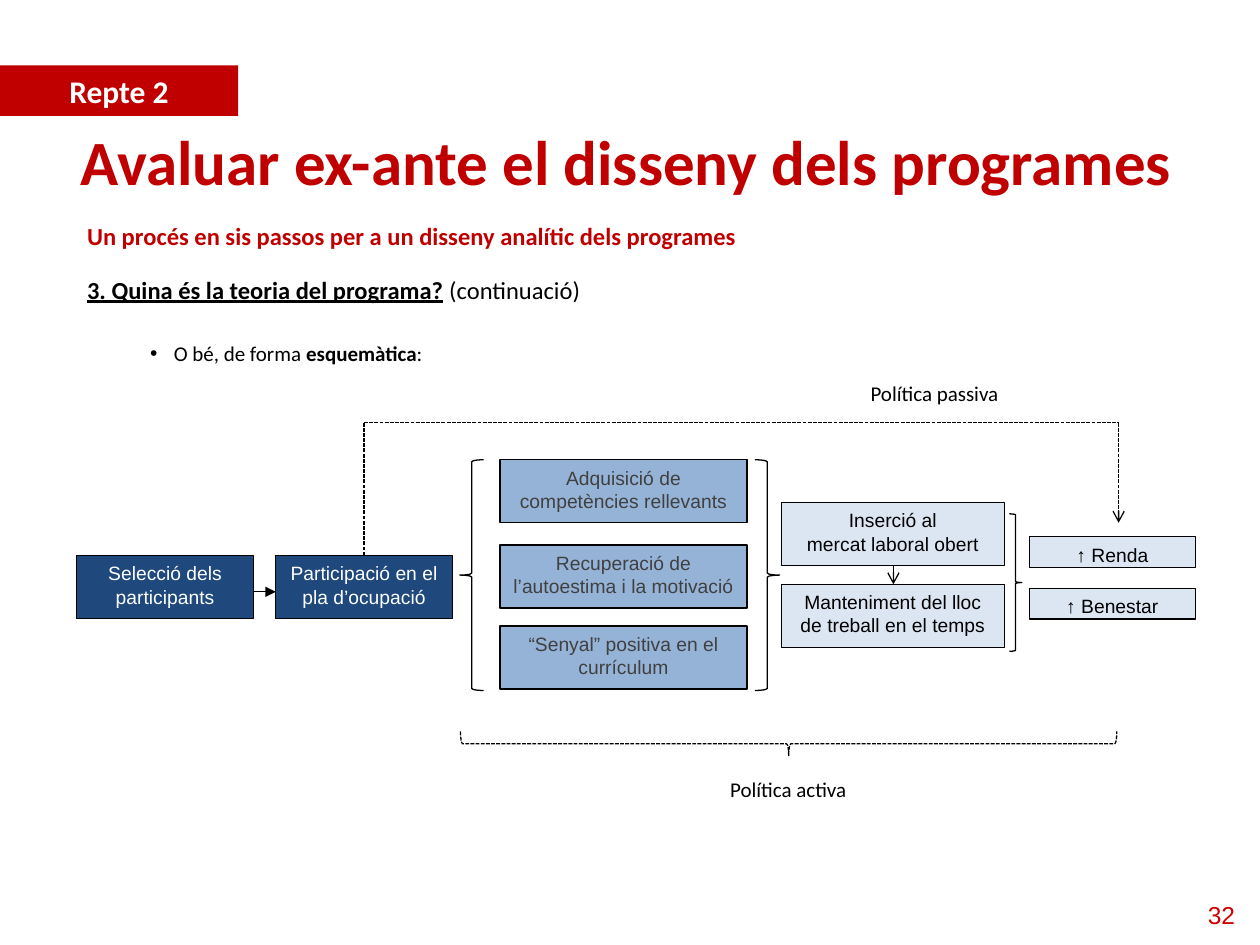
from lxml import etree
from pptx import Presentation
from pptx.dml.color import RGBColor
from pptx.enum import dml, shapes, text
from pptx.oxml import ns
from pptx.util import Cm, Pt

RED, BLACK, WHITE = "C00000", "000000", "FFFFFF"
NAVY, BLUE, PALE, GREY = "1F497D", "95B3D7", "DCE6F2", "404040"
CENTER, LEFT = text.PP_ALIGN.CENTER, text.PP_ALIGN.LEFT


def colour(hex_value):
    return RGBColor.from_string(hex_value)


def lengths(*values):
    return [Cm(value) for value in values]


def place(shape, box):
    for name, value in zip(("left", "top", "width", "height"), lengths(*box)):
        setattr(shape, name, value)


def set_font(font, fill, **values):
    for name, value in values.items():
        setattr(font, name, Pt(value) if name == "size" else value)
    font.color.rgb = colour(fill)


def set_frame(frame, anchor=text.MSO_ANCHOR.TOP):
    values = {"word_wrap": True, "auto_size": text.MSO_AUTO_SIZE.NONE,
              "vertical_anchor": anchor}
    for name, value in values.items():
        setattr(frame, name, value)


def write(shape, words, fill, align=CENTER, **font):
    frame = shape.text_frame
    set_frame(frame)
    frame.text = words
    for para in frame.paragraphs:
        para.alignment = align
        set_font(para.font, fill, **font)


def add_label(page, box, words, fill, align=CENTER, **font):
    write(page.shapes.add_textbox(*lengths(*box)), words, fill, align, **font)


def style_line(line, dashed=False):
    line.color.rgb = colour(BLACK)
    line.width = Pt(0.75)
    if dashed:
        line.dash_style = dml.MSO_LINE.SQUARE_DOT


def add_box(page, box, words, fill, ink):
    shape = page.shapes.add_shape(shapes.MSO_SHAPE.RECTANGLE, *lengths(*box))
    shape.shadow.inherit = False
    shape.fill.solid()
    shape.fill.fore_color.rgb = colour(fill)
    style_line(shape.line)
    write(shape, words, ink, name="Arial", size=11)
    return shape


def add_brace(page, box, mirrored=False, rotation=0, dashed=False):
    brace = page.shapes.add_shape(shapes.MSO_SHAPE.LEFT_BRACE, *lengths(*box))
    brace.shadow.inherit = False
    brace.fill.background()
    style_line(brace.line, dashed)
    brace.rotation = rotation
    if mirrored:
        brace._element.spPr.xfrm.set("flipH", "1")


def add_line(page, ends, head=None, dashed=False):
    line = page.shapes.add_connector(shapes.MSO_CONNECTOR.STRAIGHT, *lengths(*ends))
    style_line(line.line, dashed)
    if head:
        etree.SubElement(line.line._get_or_add_ln(), ns.qn("a:tailEnd"), type=head)
    etree.SubElement(line._element.spPr, ns.qn("a:effectLst"))


def fill_title(page, box):
    title = page.shapes.title
    place(title, box)
    write(title, "Avaluar ex-ante el disseny dels programes", RED,
          name="Calibri", size=36, bold=True)
    title.text_frame.vertical_anchor = text.MSO_ANCHOR.MIDDLE


def fill_body(page, box):
    body = page.placeholders[1]
    place(body, box)
    frame = body.text_frame
    set_frame(frame)
    # Each line: level, space before, size, colour, spans of (words, bold, underline)
    lines = [
        (0, 0, 14, RED,
         [("Un procés en sis passos per a un disseny analític dels programes", True, False)]),
        (0, 14, 14, BLACK,
         [("3. Quina és la teoria del programa?", True, True),
          (" (continuació)", False, False)]),
        (1, 21, 12, BLACK,
         [("O bé, de forma ", False, False), ("esquemàtica", True, False),
          (":", False, False)]),
    ]
    for index, (level, before, size, fill, spans) in enumerate(lines):
        para = frame.add_paragraph() if index else frame.paragraphs[0]
        para.level = level
        para.space_before = Pt(before)
        properties = para._p.get_or_add_pPr()
        properties.set("marL", str(Cm(1.75 * level)))
        properties.set("indent", str(Cm(-0.48 * level)))
        if level:
            etree.SubElement(properties, ns.qn("a:buFont"), typeface="Arial")
            etree.SubElement(properties, ns.qn("a:buChar"), char="•")
        else:
            etree.SubElement(properties, ns.qn("a:buNone"))
        for words, bold, underline in spans:
            span = para.add_run()
            span.text = words
            set_font(span.font, fill, name="Calibri", size=size,
                     bold=bold, underline=underline)


def add_tag(page, box):
    tag = add_box(page, box, "Repte 2", RED, WHITE)
    tag.line.fill.background()
    write(tag, "Repte 2", WHITE, name="Calibri", size=18, bold=True)


def add_diagram(page, left, top):
    """Draw the programme theory with its top left corner at the given point."""
    def at(x, y, *size):
        return (left + x, top + y, *size)

    def between(x1, y1, x2, y2):
        return at(x1, y1) + at(x2, y2)

    # Each column: x, width, height, fill, ink, then (y, words) for each box
    columns = [
        (0, 3.56, 1.27, NAVY, WHITE, [(3.66, "Selecció dels participants")]),
        (4.01, 3.56, 1.27, NAVY, WHITE, [(3.66, "Participació en el pla d’ocupació")]),
        (8.53, 4.98, 1.27, BLUE, GREY,
         [(1.73, "Adquisició de competències rellevants"),
          (3.45, "Recuperació de l’autoestima i la motivació"),
          (5.08, "“Senyal” positiva en el currículum")]),
        (14.2, 4.5, 1.27, PALE, BLACK,
         [(2.59, "Inserció al\nmercat laboral obert"),
          (4.24, "Manteniment del lloc de treball en el temps")]),
        (19.2, 3.35, 0.62, PALE, BLACK, [(3.28, "↑ Renda"), (4.32, "↑ Benestar")]),
    ]
    for x, width, height, fill, ink, steps in columns:
        for y, words in steps:
            add_box(page, at(x, y, width, height), words, fill, ink)

    add_brace(page, at(7.72, 1.73, 0.48, 4.65))
    add_brace(page, at(13.67, 1.73, 0.5, 4.65), mirrored=True)
    add_brace(page, at(18.8, 2.82, 0.25, 2.77), mirrored=True)
    add_brace(page, at(14.1, 0.84, 0.5, 13.23), mirrored=True, rotation=90, dashed=True)

    add_line(page, between(3.56, 4.39, 4.01, 4.39), "triangle")
    add_line(page, between(16.46, 3.86, 16.46, 4.24), "arrow")
    add_line(page, between(5.79, 3.66, 5.79, 0.98), dashed=True)
    add_line(page, between(5.79, 0.98, 21, 0.98), dashed=True)
    add_line(page, between(21, 0.98, 21, 3), "arrow", dashed=True)

    font = {"name": "Calibri", "size": 12}
    add_label(page, at(15.75, 0, 5, 0.76), "Política passiva", BLACK, LEFT, **font)
    add_label(page, at(11.84, 7.98, 5, 0.76), "Política activa", BLACK, **font)


def main():
    deck = Presentation()
    deck.slide_width, deck.slide_height = lengths(25.4, 19.05)
    page = deck.slides.add_slide(deck.slide_layouts[1])
    fill_title(page, (0, 2.34, 25.25, 1.8))
    fill_body(page, (1.5, 4.32, 23.24, 4.39))
    add_diagram(page, 1.55, 7.54)
    add_tag(page, (0, 1.32, 4.8, 1.02))
    add_label(page, (24.1, 18.01, 1.3, 0.86), "32", "CC0000", LEFT,
              name="Arial", size=14)
    deck.save("out.pptx")


if __name__ == "__main__":
    main()
